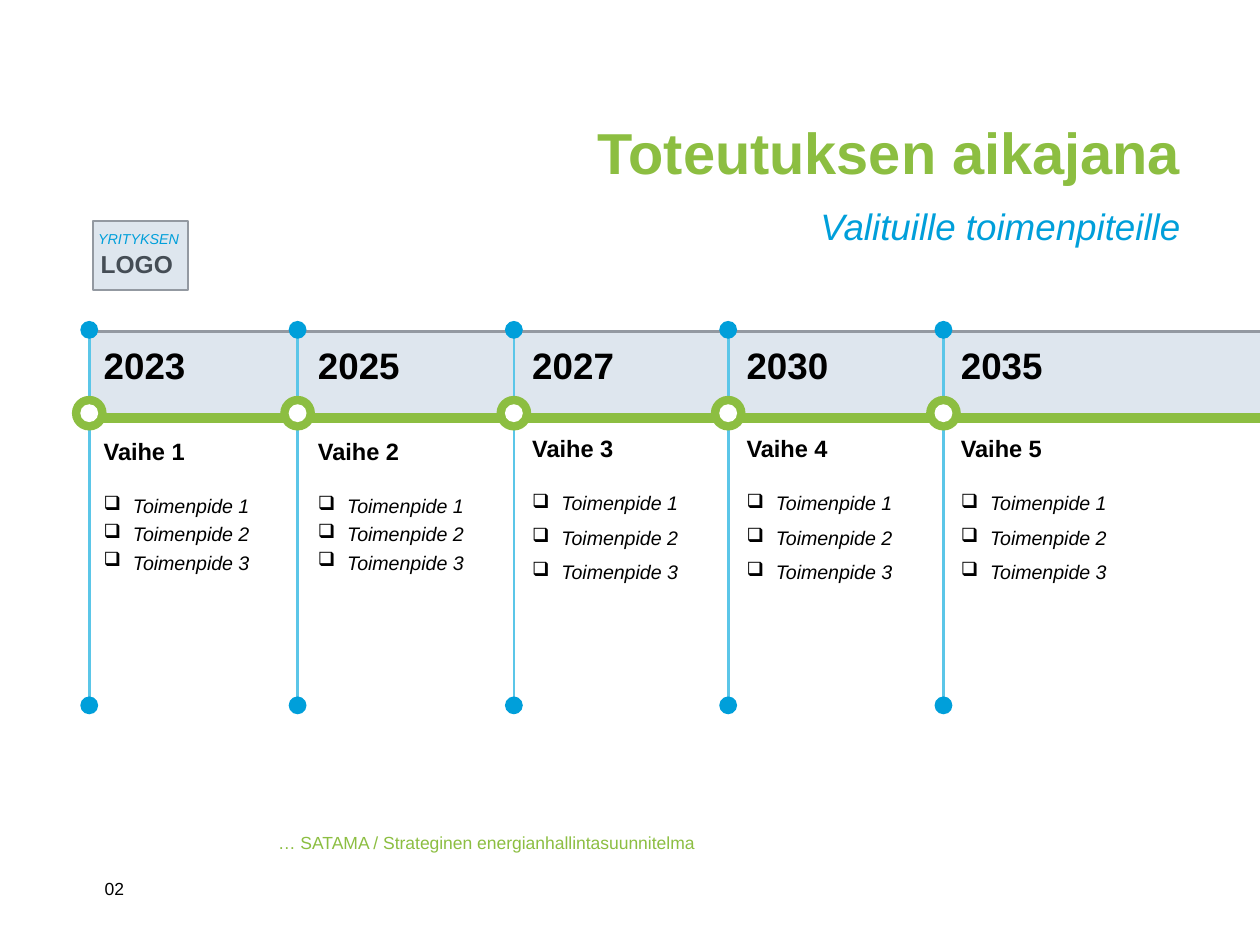
import pptx
import pptx.dml.color
import pptx.enum.shapes
import pptx.enum.text
import pptx.oxml
import pptx.oxml.ns
import pptx.util

Cm, Pt = pptx.util.Cm, pptx.util.Pt
SHAPE = pptx.enum.shapes.MSO_SHAPE
ALIGN = pptx.enum.text.PP_ALIGN
ANCHOR = pptx.enum.text.MSO_ANCHOR

COLORS = {
    "green": "8CBE41",
    "blue": "009FDA",
    "sky": "5BC6E8",
    "band": "DEE6EE",
    "gray": "9399A1",
    "slate": "454D55",
    "black": "000000",
    "white": "FFFFFF",
}

# Year, phase, marker centre (cm)
PHASES = [
    ("2023", "Vaihe 1", 1.8),
    ("2025", "Vaihe 2", 6),
    ("2027", "Vaihe 3", 10.36),
    ("2030", "Vaihe 4", 14.68),
    ("2035", "Vaihe 5", 19.02),
]
ACTIONS = ["Toimenpide 1", "Toimenpide 2", "Toimenpide 3"]

SLIDE_W, SLIDE_H = 25.4, 19.05
BAND_TOP, GREEN_Y, RING_Y, MARKER_END = 6.68, 8.43, 8.33, 14.22
TEXT_LEFT, TEXT_STEP, TEXT_W = 2.09, 4.32, 3.53


def rgb(name):
    return pptx.dml.color.RGBColor.from_string(COLORS[name])


class SlideBuilder:
    font = "Arial"

    def __init__(self, slide):
        self.s = slide

    def set_text(self, sp, lines, size, color="black", bold=False,
                 italic=False, align=ALIGN.LEFT, anchor=ANCHOR.TOP, wrap=True,
                 bullet=None, spacing=1, gap=0):
        """Fill a shape's text frame, with no insets, in one style."""
        tf = sp.text_frame
        tf.text = "\n".join(lines)
        tf.word_wrap = wrap
        tf.auto_size = pptx.enum.text.MSO_AUTO_SIZE.NONE
        tf.vertical_anchor = anchor
        tf.margin_left = tf.margin_right = tf.margin_top = tf.margin_bottom = 0
        for i, p in enumerate(tf.paragraphs):
            p.alignment = align
            p.line_spacing = spacing
            p.space_before = Pt(gap if i else 0)
            if bullet:
                self.add_bullet(p, bullet)
            for r in p.runs:
                r.font.name = self.font
                r.font.size = Pt(size)
                r.font.bold = bold
                r.font.italic = italic
                r.font.color.rgb = rgb(color)

    def add_bullet(self, p, char):
        pPr = p._p.get_or_add_pPr()
        pPr.set("marL", str(Cm(0.59)))
        pPr.set("indent", str(-Cm(0.59)))
        bu = pptx.oxml.parse_xml(
            f'<a:buChar {pptx.oxml.ns.nsdecls("a")} char="{char}"/>')
        pPr.append(bu)

    def placeholder(self, idx, box, text, size, color, **style):
        sp = self.s.placeholders[idx]
        sp.left, sp.top, sp.width, sp.height = map(Cm, box)
        self.set_text(sp, [text], size, color, align=ALIGN.RIGHT, **style)

    def text(self, box, lines, size, color="black", **style):
        sp = self.s.shapes.add_textbox(*map(Cm, box))
        self.set_text(sp, lines, size, color, **style)

    def shape(self, kind, box, fill, outline=None):
        sp = self.s.shapes.add_shape(kind, *map(Cm, box))
        sp.shadow.inherit = False
        sp.fill.solid()
        sp.fill.fore_color.rgb = rgb(fill)
        if outline:
            sp.line.color.rgb = rgb(outline)
            sp.line.width = Pt(1)
        else:
            sp.line.fill.background()

    def dot(self, x, y, size, fill):
        """Draw a circle centred on x, y."""
        self.shape(SHAPE.OVAL, (x - size / 2, y - size / 2, size, size), fill)

    def line(self, x1, y1, x2, y2, color, width):
        c = self.s.shapes.add_connector(
            pptx.enum.shapes.MSO_CONNECTOR.STRAIGHT, *map(Cm, (x1, y1, x2, y2)))
        c.line.color.rgb = rgb(color)
        c.line.width = Pt(width)
        c._element.spPr.append(
            pptx.oxml.parse_xml(f'<a:effectLst {pptx.oxml.ns.nsdecls("a")}/>'))

    def marker(self, x):
        self.line(x, BAND_TOP, x, MARKER_END, "sky", 1.5)
        self.dot(x, BAND_TOP - 0.03, 0.36, "blue")
        self.dot(x, MARKER_END, 0.36, "blue")
        self.dot(x, RING_Y, 0.7, "green")
        self.dot(x, RING_Y, 0.36, "white")

    def phase(self, i, year, name):
        left = TEXT_LEFT + i * TEXT_STEP
        spacing, gap = (1, 2.7) if i < 2 else (0.9, 7.5)
        self.text((left, 6.91, TEXT_W, 1.24), [year], 21, bold=True)
        self.text((left, 8.81, TEXT_W, 1.02), [name], 13.5, bold=True,
                  spacing=spacing)
        self.text((left, 9.96, TEXT_W, 2.95), ACTIONS, 11.2, italic=True,
                  bullet="❑", spacing=spacing, gap=gap)

    def company_sign(self):
        self.shape(SHAPE.RECTANGLE, (1.87, 4.46, 1.92, 1.39), "band", "gray")
        self.text((1.98, 4.65, 1.75, 0.36), ["YRITYKSEN"], 8.2, "blue",
                  italic=True, wrap=False)
        self.text((2.03, 5.02, 1.6, 0.6), ["LOGO"], 14, "slate", bold=True,
                  wrap=False)


def main():
    prs = pptx.Presentation()
    prs.slide_width, prs.slide_height = Cm(SLIDE_W), Cm(SLIDE_H)
    b = SlideBuilder(prs.slides.add_slide(prs.slide_layouts[0]))

    b.placeholder(0, (5.84, 1.55, 17.96, 2.21), "Toteutuksen aikajana",
                  33, "green", bold=True, anchor=ANCHOR.BOTTOM)
    b.placeholder(1, (5.84, 4.11, 17.96, 1.02), "Valituille toimenpiteille",
                  21, "blue", italic=True)
    b.company_sign()

    b.shape(SHAPE.RECTANGLE,
            (1.83, BAND_TOP, SLIDE_W - 1.83, GREEN_Y - BAND_TOP), "band")
    b.line(1.9, BAND_TOP, SLIDE_W, BAND_TOP, "gray", 1.5)
    b.line(1.98, GREEN_Y, SLIDE_W, GREEN_Y, "green", 5.7)
    for i, (year, name, x) in enumerate(PHASES):
        b.marker(x)
        b.phase(i, year, name)

    b.text((5.61, 16.48, 8.92, 0.99),
           ["… SATAMA / Strateginen energianhallintasuunnitelma"],
           10, "green", anchor=ANCHOR.MIDDLE)
    b.text((2.11, 17.42, 0.94, 0.99), ["02"], 10, anchor=ANCHOR.MIDDLE)
    prs.save("out.pptx")


if __name__ == "__main__":
    main()
